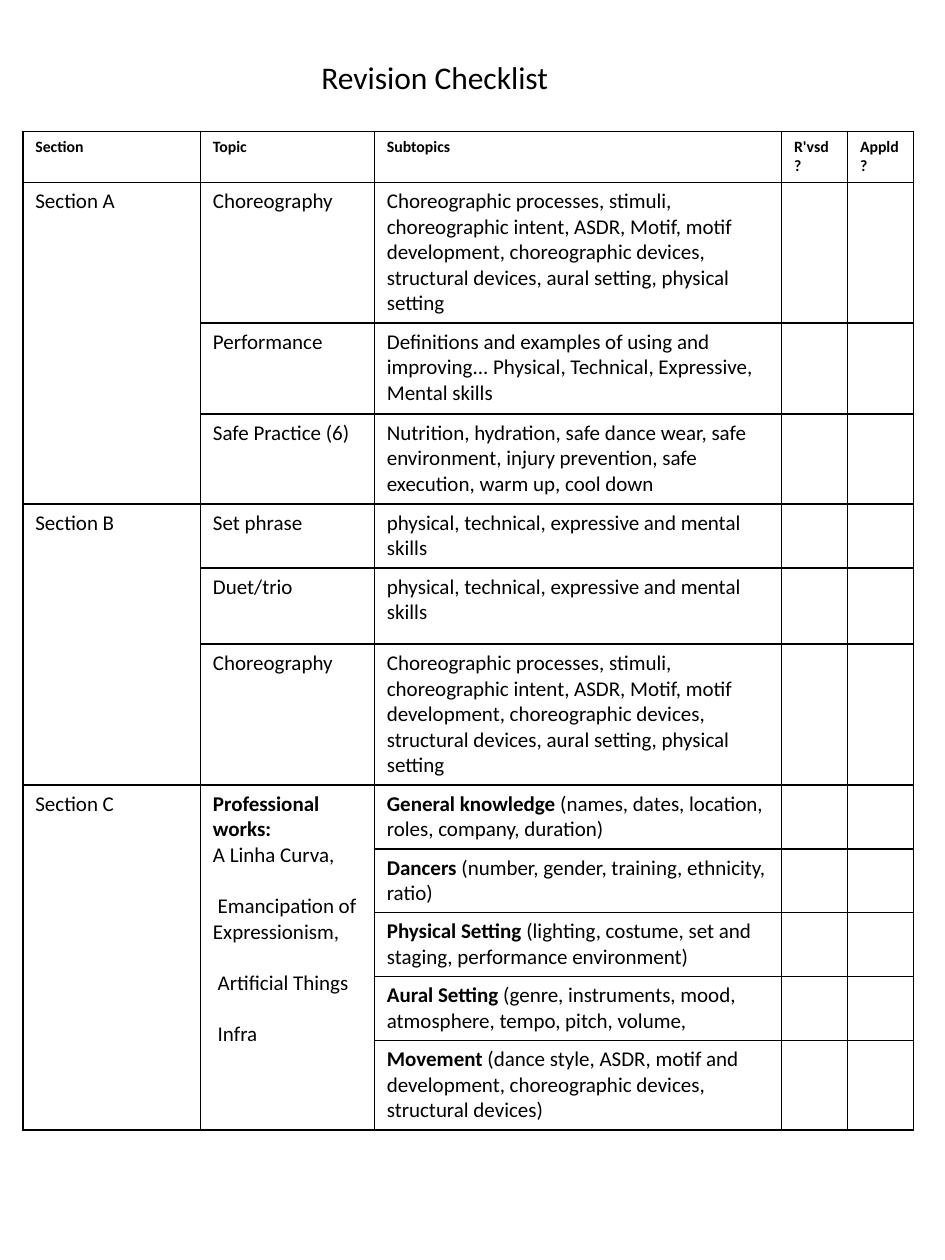
"""Build a one-page revision checklist with a title and a merged table."""
from pptx import Presentation
from pptx.dml.color import RGBColor
from pptx.enum import text as tx
from pptx.oxml import parse_xml
from pptx.oxml.ns import nsdecls
from pptx.util import Pt

THEME = {"font": "Calibri", "ink": "000000", "title": 18, "head": 9, "body": 12, "line": 1}
TITLE = "Revision Checklist"
HEADS = ["Section", "Topic", "Subtopics", "R'vsd?", "Appld?"]
SKILLS = "physical, technical, expressive and mental skills"
WORKS = [("Professional works:", ""), ("", "A Linha Curva,"),
         ("", " Emancipation of Expressionism, "),
         ("", " Artificial Things"), ("", " Infra")]
GAPPED = 2

ROWS = [
    ("Section A", "Choreography", "", "Choreographic processes, stimuli, choreographic intent, ASDR, Motif, "
     "motif development, choreographic devices, structural devices, aural setting, physical setting", 80),
    ("", "Performance", "", "Definitions and examples of using and improving... "
     "Physical, Technical, Expressive, Mental skills", 52),
    ("", "Safe Practice (6)", "", "Nutrition, hydration, safe dance wear, safe environment, "
     "injury prevention, safe execution, warm up, cool down", 51.4),
    ("Section B", "Set phrase", "", SKILLS, 36.6),
    ("", "Duet/trio", "", SKILLS, 43.6),
    ("", "Choreography", "", "Choreographic processes, stimuli, choreographic intent, ASDR, Motif, "
     "motif development, choreographic devices, structural devices, aural setting, physical setting", 80.4),
    ("Section C", WORKS, "General knowledge", " (names, dates, location, roles, company, duration)", 36.5),
    ("", "", "Dancers ", "(number, gender, training, ethnicity, ratio)", 36.5),
    ("", "", "Physical Setting", " (lighting, costume, set and staging, performance environment)", 36.5),
    ("", "", "Aural Setting", " (genre, instruments, mood, atmosphere, tempo, pitch, volume,", 36.5),
    ("", "", "Movement", " (dance style, ASDR, motif and development, choreographic devices, "
     "structural devices)", 51.4),
]
COLS = [101.5, 99.4, 232.7, 37.7, 37.7]
HEAD_H = 29.2
MERGES = [(1, 0, 3), (4, 0, 6), (7, 0, 11), (7, 1, 11)]


def style(run, size, bold=False):
    font = run.font
    font.name, font.size, font.bold = THEME["font"], Pt(size), bold
    font.color.rgb = RGBColor.from_string(THEME["ink"])


def write(cell, paras, size):
    frame = cell.text_frame
    for n, parts in enumerate(paras):
        para = frame.add_paragraph() if n else frame.paragraphs[0]
        if n >= GAPPED:
            para.space_before = Pt(14.6)
        for bold, words in zip((True, False), parts):
            if words:
                run = para.add_run()
                run.text = words
                style(run, size, bold)


def border(cell):
    cell.fill.background()
    props = cell._tc.get_or_add_tcPr()
    for n, side in enumerate("LRTB"):
        props.insert(n, parse_xml(
            f'<a:ln{side} {nsdecls("a")} w="{Pt(THEME["line"])}"><a:solidFill>'
            f'<a:srgbClr val="{THEME["ink"]}"/></a:solidFill></a:ln{side}>'))


def add_title(slide):
    title = slide.shapes.title
    title.left, title.top, title.width, title.height = Pt(176.4), Pt(29.5), Pt(216), Pt(29)
    frame = title.text_frame
    frame.text = TITLE
    frame.word_wrap = True
    frame.auto_size = tx.MSO_AUTO_SIZE.NONE
    frame.vertical_anchor = tx.MSO_ANCHOR.TOP
    para = frame.paragraphs[0]
    para.alignment = tx.PP_ALIGN.LEFT
    style(para.runs[0], THEME["title"])


def add_list(slide):
    highs = [HEAD_H] + [row[-1] for row in ROWS]
    table = slide.shapes.add_table(len(highs), len(COLS), Pt(13), Pt(75),
                                   Pt(sum(COLS)), Pt(sum(highs))).table
    table.first_row = table.horz_banding = False
    for col, wide in zip(table.columns, COLS):
        col.width = Pt(wide)
    for row, high in zip(table.rows, highs):
        row.height = Pt(high)
    for cell in table.iter_cells():
        border(cell)
    for top, col, end in MERGES:
        table.cell(top, col).merge(table.cell(end, col))
    for c, head in enumerate(HEADS):
        write(table.cell(0, c), [(head, "")], THEME["head"])
    for r, (part, topic, lead, rest, _) in enumerate(ROWS, 1):
        topics = topic if isinstance(topic, list) else [("", topic)]
        for c, paras in enumerate(([("", part)], topics, [(lead, rest)])):
            write(table.cell(r, c), paras, THEME["body"])


def main():
    deck = Presentation()
    deck.slide_width, deck.slide_height = Pt(540), Pt(720)
    slide = deck.slides.add_slide(deck.slide_layouts[5])
    add_title(slide)
    add_list(slide)
    deck.save("out.pptx")


if __name__ == "__main__":
    main()
